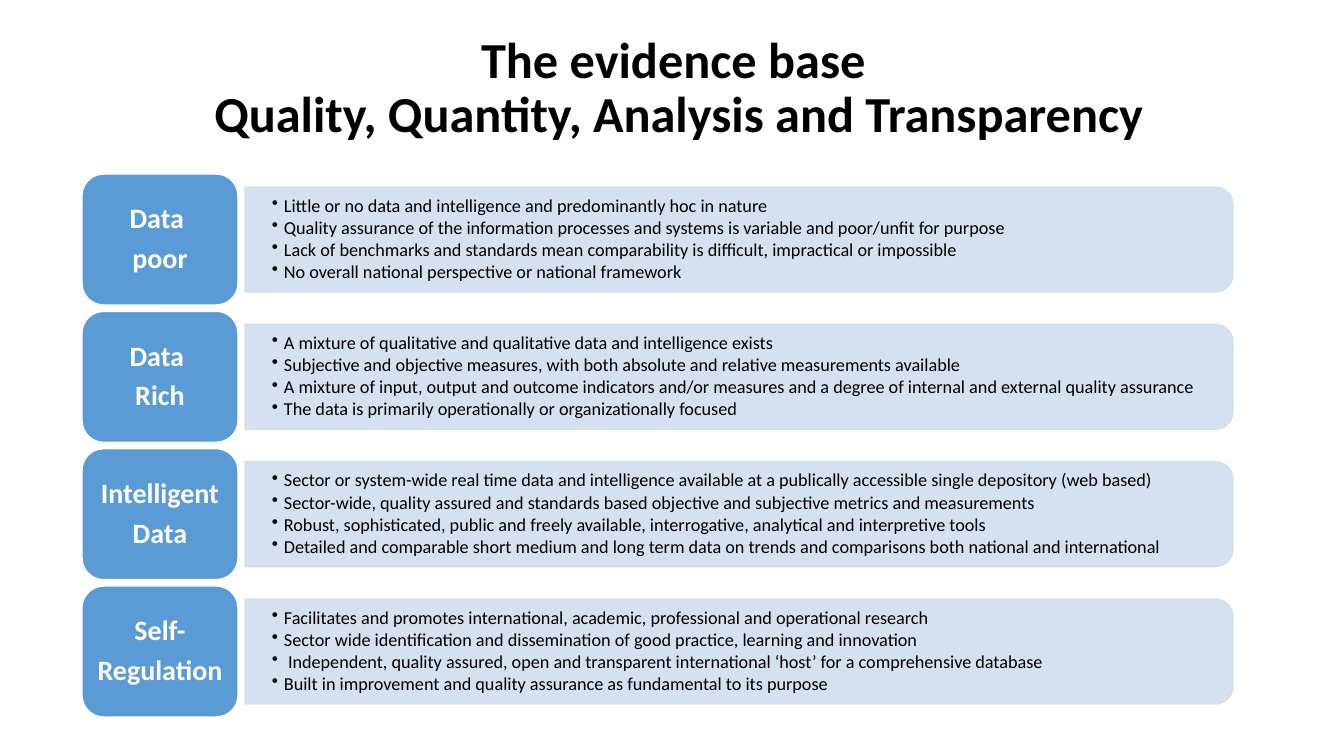
from lxml import etree
from pptx import Presentation, util as u
from pptx.dml.color import RGBColor
from pptx.enum import shapes, text
from pptx.oxml.ns import qn

# Content
TITLE = ["The evidence base", " Quality, Quantity, Analysis and Transparency"]
ROWS = [
    (["Data ", "poor"], [
        "Little or no data and intelligence and predominantly hoc in nature",
        "Quality assurance of the information processes and systems is variable and poor/unfit for purpose",
        "Lack of benchmarks and standards mean comparability is difficult, impractical or impossible",
        "No overall national perspective or national framework"]),
    (["Data ", "Rich"], [
        "A mixture of qualitative and qualitative data and intelligence exists",
        "Subjective and objective measures, with both absolute and relative measurements available",
        "A mixture of input, output and outcome indicators and/or measures and a degree of internal and external quality assurance",
        "The data is primarily operationally or organizationally focused"]),
    (["Intelligent", "Data"], [
        "Sector or system-wide real time data and intelligence available at a publically accessible single depository (web based)",
        "Sector-wide, quality assured and standards based objective and subjective metrics and measurements",
        "Robust, sophisticated, public and freely available, interrogative, analytical and interpretive tools",
        "Detailed and comparable short medium and long term data on trends and comparisons both national and international"]),
    (["Self-", "Regulation"], [
        "Facilitates and promotes international, academic, professional and operational research",
        "Sector wide identification and dissemination of good practice, learning and innovation",
        " Independent, quality assured, open and transparent international ‘host’ for a comprehensive database",
        "Built in improvement and quality assurance as fundamental to its purpose"]),
]
COLORS = {"tile": "5B9BD5", "bar": "D2DEEF", "white": "FFFFFF", "black": "000000"}
FONT = "Calibri"

# Layout in px
WIDE, HIGH = 1344, 756
TOP, BOTTOM = 174, 717
TILE_X, TILE_W, TILE_H = 82, 156, 131
BAR_X, BAR_W, BAR_H = 245, 988, 105
LIST_W, LIST_H = 983, 95
PITCH = (BOTTOM - TOP - TILE_H) / (len(ROWS) - 1)


def px(n):
    return u.Emu(round(n * 914400 / 100.8))


def rgb(name):
    return RGBColor.from_string(COLORS[name])


def add_run(para, words, size, color, bold=False):
    run = para.add_run()
    run.text = words
    font = run.font
    font.name, font.size, font.bold = FONT, u.Pt(size), bold
    font.color.rgb = rgb(color)


def set_frame(shape, side, edge):
    frame = shape.text_frame
    frame.word_wrap = True
    frame.vertical_anchor = text.MSO_ANCHOR.MIDDLE
    frame.margin_left = frame.margin_right = px(side)
    frame.margin_top = frame.margin_bottom = px(edge)
    return frame


def add_lines(frame, lines, align, gap, size, color, bold=False):
    for i, words in enumerate(lines):
        para = frame.add_paragraph() if i else frame.paragraphs[0]
        para.alignment = align
        para.line_spacing = 0.9
        para.space_after = u.Pt(gap)
        add_run(para, words, size, color, bold)


def add_bullet(para):
    props = para._p.get_or_add_pPr()
    props.set("marL", str(px(12)))
    props.set("indent", str(-px(12)))
    etree.SubElement(props, qn("a:buChar")).set("char", "•")


def add_box(kind, x, y, w, h, fill, line):
    box = slide.shapes.add_shape(kind, px(x), px(y), px(w), px(h))
    box.shadow.inherit = False
    box.fill.solid()
    box.fill.fore_color.rgb = rgb(fill)
    box.line.color.rgb = rgb(line)
    box.line.width = u.Pt(1)
    return box


def add_bar(mid):
    # Turned a quarter so that the two round corners face right
    bar = add_box(shapes.MSO_SHAPE.ROUND_2_SAME_RECTANGLE,
                  BAR_X + (BAR_W - BAR_H) / 2, mid - BAR_W / 2,
                  BAR_H, BAR_W, "bar", "bar")
    bar.rotation = 90
    for tone in bar._element.spPr.iter(qn("a:srgbClr")):
        etree.SubElement(tone, qn("a:alpha")).set("val", "90000")


def add_list(mid, points):
    box = slide.shapes.add_textbox(px(BAR_X), px(mid - LIST_H / 2), px(LIST_W), px(LIST_H))
    frame = set_frame(box, 27, 14)
    add_lines(frame, points, text.PP_ALIGN.LEFT, 1.7, 13, "black")
    for para in frame.paragraphs:
        add_bullet(para)


def add_tile(top, label):
    tile = add_box(shapes.MSO_SHAPE.ROUNDED_RECTANGLE,
                   TILE_X, top, TILE_W, TILE_H, "tile", "white")
    add_lines(set_frame(tile, 7, 4), label, text.PP_ALIGN.CENTER, 6.6, 20, "white", True)


deck = Presentation()
deck.slide_width, deck.slide_height = px(WIDE), px(HIGH)
slide = deck.slides.add_slide(deck.slide_layouts[6])

# Title
head = slide.shapes.add_textbox(px(83), px(16), px(1181), px(146))
para = set_frame(head, 10, 5).paragraphs[0]
para.alignment = text.PP_ALIGN.CENTER
para.line_spacing = 0.9
for i, words in enumerate(TITLE):
    if i:
        para.add_line_break()
    add_run(para, words, 36, "black", True)

# Rows
for i, (label, points) in enumerate(ROWS):
    top = TOP + i * PITCH
    mid = top + TILE_H / 2
    add_bar(mid)
    add_list(mid, points)
    add_tile(top, label)

deck.save("out.pptx")
